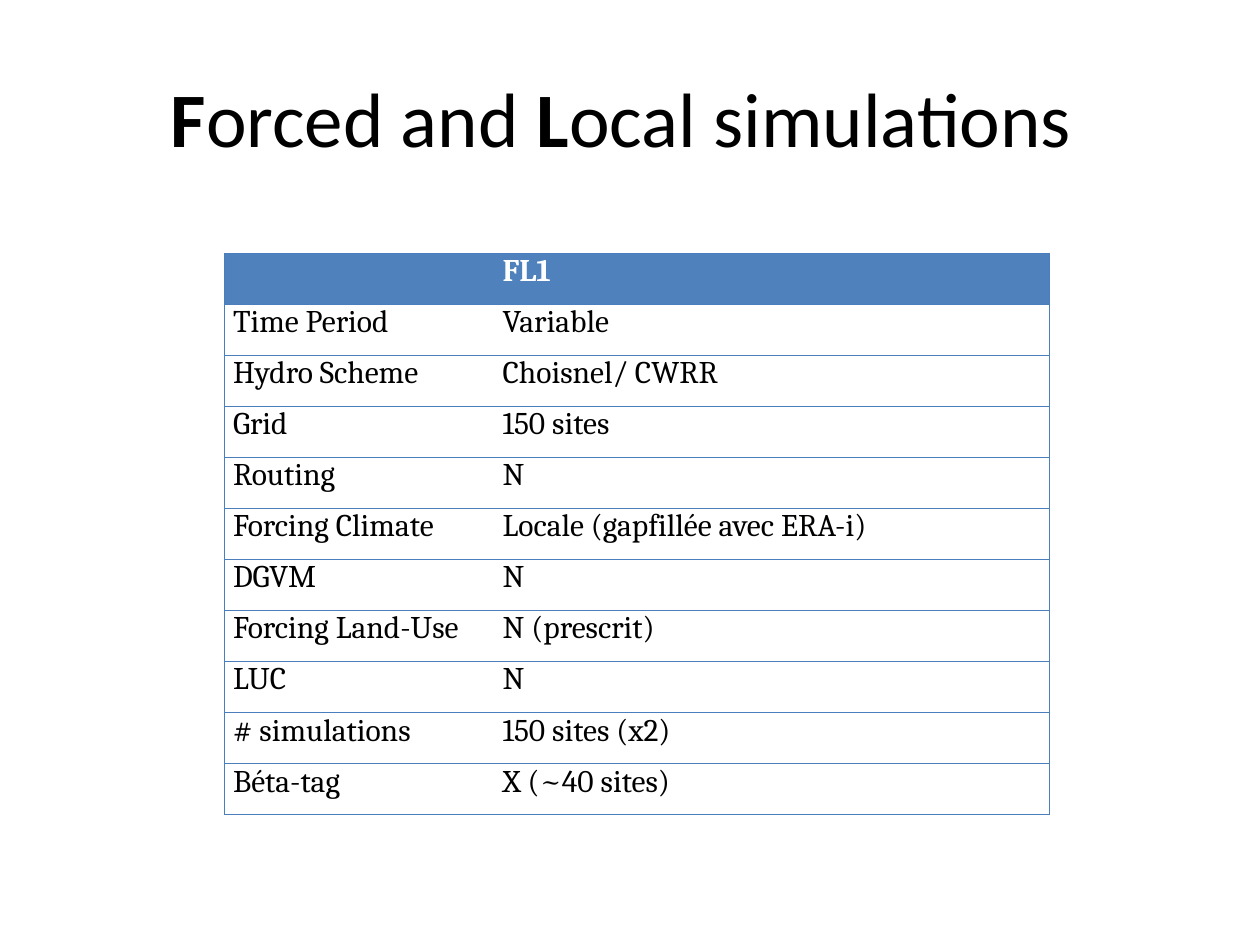
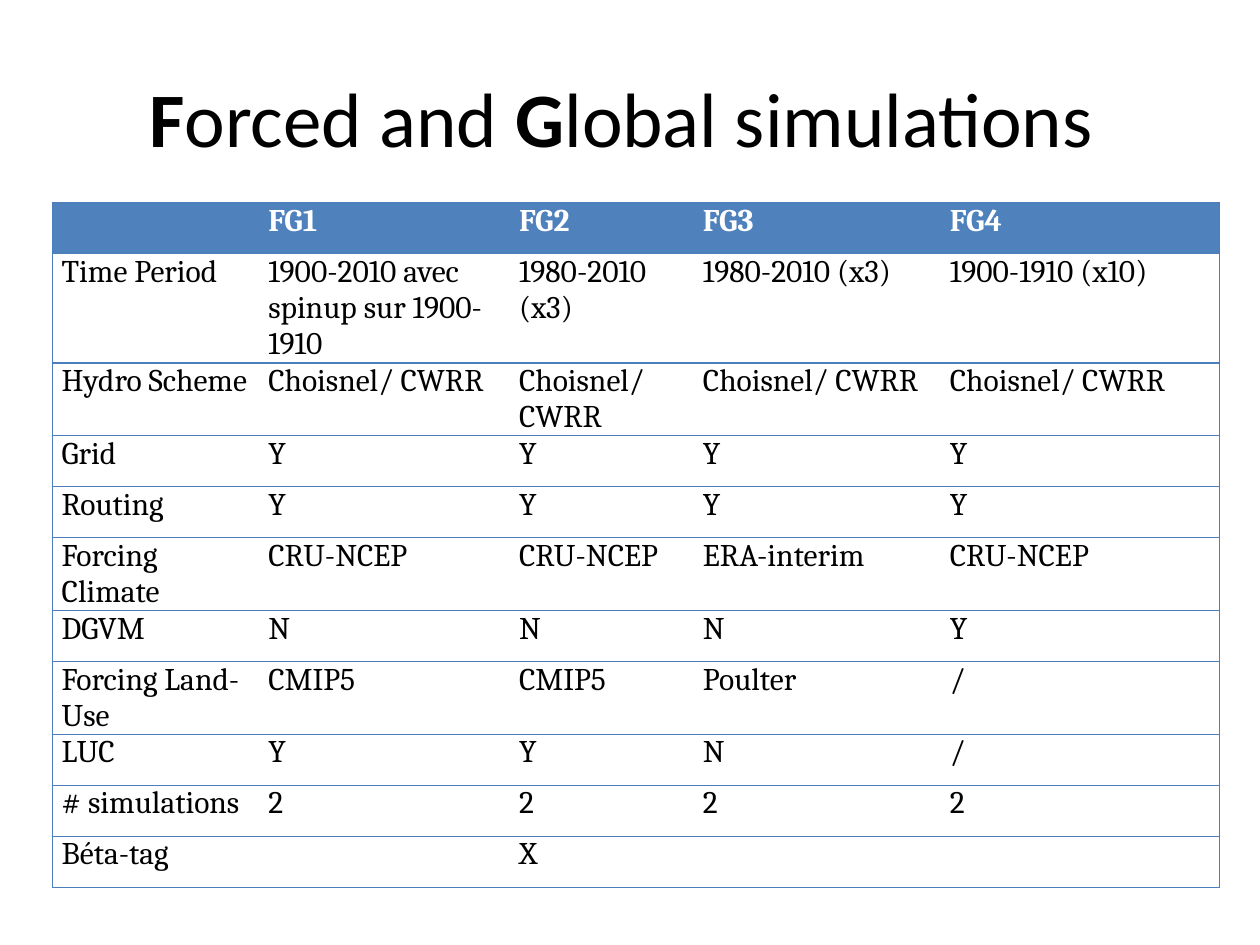
from dataclasses import dataclass

from lxml import etree
from pptx import Presentation
from pptx import util as u
from pptx.dml.color import RGBColor
from pptx.enum import text
from pptx.oxml import ns


@dataclass(frozen=True)
class Theme:
    """Colours, fonts and sizes shared by the slides."""
    head: str = "4F81BD"
    rule: str = "4B7EBC"
    ink: str = "000000"
    pale: str = "FFFFFF"
    title: str = "Calibri"
    body: str = "Cambria"
    big: int = 44
    small: int = 18
    line: float = 0.75
    pad: float = 0.07


LOOK = Theme()
TITLE_BOX = (0.5, 0.3, 9, 1.25)
LABELS = ("", "Time Period", "Hydro Scheme", "Grid", "Routing",
          "Forcing Climate", "DGVM", "Forcing Land-Use", "LUC",
          "# simulations", "Béta-tag")
LOCAL = [
    ("FL1", "Variable", "Choisnel/ CWRR", "150 sites", "N",
     "Locale (gapfillée avec ERA-i)", "N", "N (prescrit)", "N",
     "150 sites (x2)", "X (~40 sites)"),
]
GLOBAL = [
    ("FG1", "1900-2010 avec spinup sur 1900-1910", "Choisnel/ CWRR",
     "Y", "Y", "CRU-NCEP", "N", "CMIP5", "Y", "2", ""),
    ("FG2", "1980-2010 (x3)", "Choisnel/ CWRR",
     "Y", "Y", "CRU-NCEP", "N", "CMIP5", "Y", "2", "X"),
    ("FG3", "1980-2010 (x3)", "Choisnel/ CWRR",
     "Y", "Y", "ERA-interim", "N", "Poulter", "N", "2", ""),
    ("FG4", "1900-1910 (x10)", "Choisnel/ CWRR",
     "Y", "Y", "CRU-NCEP", "Y", "/", "/", "2", ""),
]


def style(font, name, size, color, bold):
    """Set the look of a font."""
    font.name, font.size, font.bold = name, u.Pt(size), bold
    font.color.rgb = RGBColor.from_string(color)


def add_title(slide, parts, box):
    """Fill the title, with the first letter of each part in bold."""
    shape = slide.shapes.title
    shape.left, shape.top, shape.width, shape.height = map(u.Inches, box)
    frame = shape.text_frame
    frame.vertical_anchor = text.MSO_ANCHOR.MIDDLE
    para = frame.paragraphs[0]
    para.alignment = text.PP_ALIGN.CENTER
    for part in parts:
        for words, bold in ((part[0], True), (part[1:], False)):
            run = para.add_run()
            run.text = words
            style(run.font, LOOK.title, LOOK.big, LOOK.ink, bold)


def add_rule(cell, side, shown):
    """Draw or hide the border on one side of a cell."""
    props = cell._tc.get_or_add_tcPr()
    line = etree.SubElement(props, ns.qn(f"a:ln{side}"),
                            w=str(u.Pt(LOOK.line)))
    if shown:
        fill = etree.SubElement(line, ns.qn("a:solidFill"))
        etree.SubElement(fill, ns.qn("a:srgbClr"), val=LOOK.rule)
    else:
        etree.SubElement(line, ns.qn("a:noFill"))


def fill_cell(cell, words, head, first, last):
    """Write one cell and set its borders and fill."""
    cell.margin_left = cell.margin_right = u.Inches(LOOK.pad)
    cell.margin_top = cell.margin_bottom = 0
    for side, shown in (("L", first), ("R", last), ("T", True), ("B", True)):
        add_rule(cell, side, shown)
    if head:
        cell.fill.solid()
        cell.fill.fore_color.rgb = RGBColor.from_string(LOOK.head)
    else:
        cell.fill.background()
    cell.text_frame.text = words
    para = cell.text_frame.paragraphs[0]
    color = LOOK.pale if head else LOOK.ink
    for font in (para.font, *(run.font for run in para.runs)):
        style(font, LOOK.body, LOOK.small, color, head)


def add_grid(slide, runs, widths, box):
    """Add a table of labels and simulation columns in the box."""
    cols = [LABELS, *runs]
    table = slide.shapes.add_table(len(LABELS), len(cols),
                                   *map(u.Inches, box)).table
    table.horz_banding = False
    for col, width in zip(table.columns, widths):
        col.width = u.Inches(width)
    for x, col in enumerate(cols):
        for y, words in enumerate(col):
            fill_cell(table.cell(y, x), words, y == 0,
                      x == 0, x == len(cols) - 1)


def add_slide(deck, parts, runs, widths, left, top):
    """Add a slide with a title and a table of simulations."""
    slide = deck.slides.add_slide(deck.slide_layouts[5])
    add_title(slide, parts, TITLE_BOX)
    add_grid(slide, runs, widths, (left, top, sum(widths), 4.46))


def main():
    """Build and save the deck."""
    deck = Presentation()
    deck.slide_width, deck.slide_height = u.Inches(10), u.Inches(7.5)
    add_slide(deck, ("Forced and ", "Local simulations "), LOCAL,
              (2.14, 4.41), 1.78, 2.01)
    add_slide(deck, ("Forced and ", "Global simulations "), GLOBAL,
              (1.64, 1.99, 1.46, 1.96, 2.21), 0.42, 1.61)
    deck.save("out.pptx")


if __name__ == "__main__":
    main()
